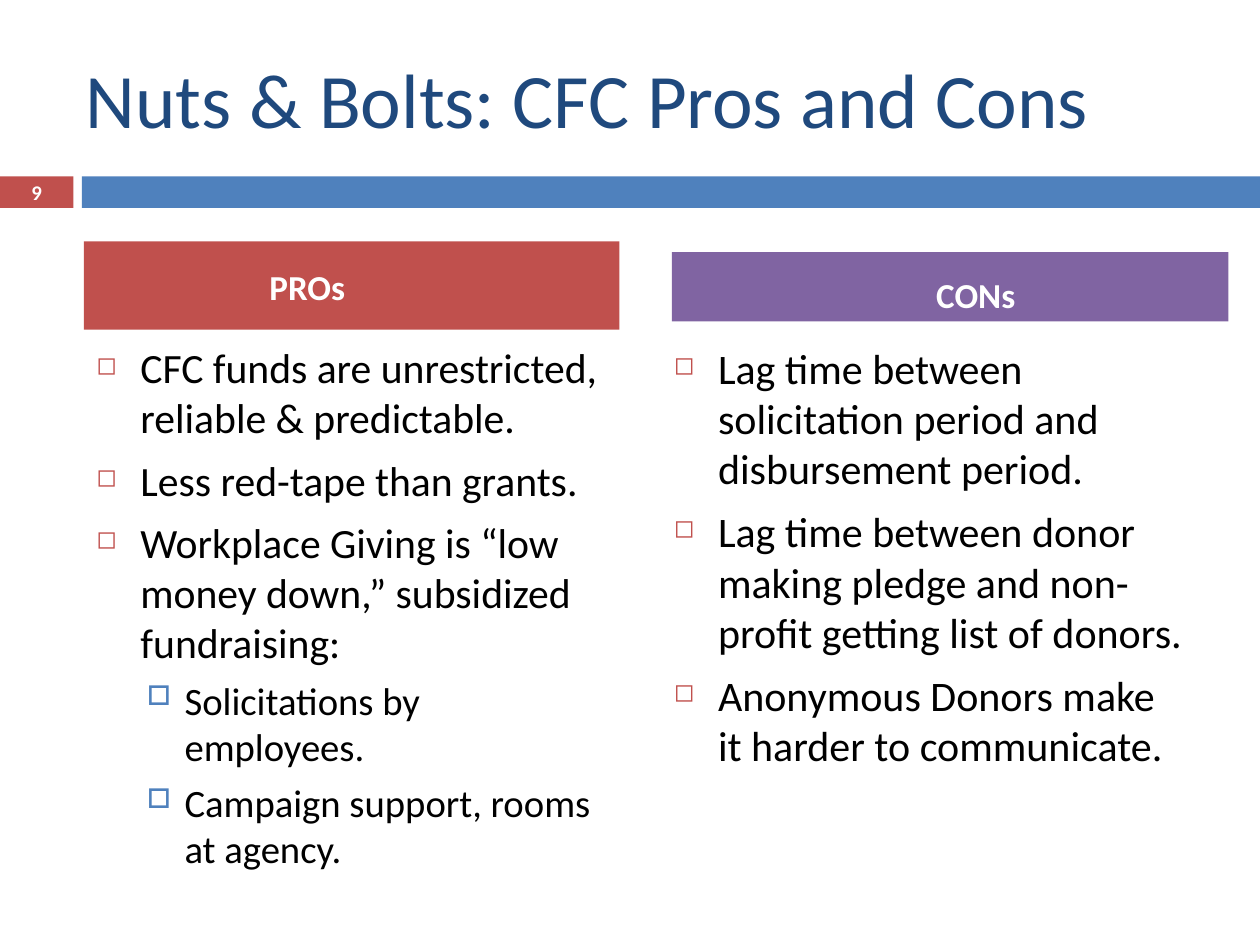
import pptx
import pptx.dml.color
import pptx.enum.shapes
import pptx.enum.text
import pptx.oxml.ns
import pptx.util
from lxml import etree

Pt = pptx.util.Pt
ANCHOR = pptx.enum.text.MSO_ANCHOR
ALIGN = pptx.enum.text.PP_ALIGN
FONT = "Calibri"
COLORS = {
    "title": "1F497D",
    "red": "C0504D",
    "blue": "4F81BD",
    "purple": "8064A2",
    "text": "000000",
    "white": "FFFFFF",
}
# Bullet levels: left indent, hanging indent, space before, character, color, size %
LEVELS = [
    (25.2, 25.2, 7, "◻", "red", 60),
    (50.4, 21.6, 5.5, "□", "blue", 70),
]
PROS = [
    (0, "CFC funds are unrestricted, reliable & predictable."),
    (0, "Less red-tape than grants."),
    (0, "Workplace Giving is “low money down,” subsidized fundraising:"),
    (1, "Solicitations by employees."),
    (1, "Campaign support, rooms at agency."),
]
CONS = [
    (0, "Lag time between solicitation period and disbursement period."),
    (0, "Lag time between donor making pledge and non-profit getting list of donors."),
    (0, "Anonymous Donors make it harder to communicate."),
]


def rgb(name):
    return pptx.dml.color.RGBColor.from_string(COLORS[name])


def format_runs(paragraph, size, color, bold=False):
    for run in paragraph.runs:
        run.font.name = FONT
        run.font.size = Pt(size)
        run.font.bold = bold
        run.font.color.rgb = rgb(color)


def add_bar(slide, left, top, width, height, color):
    shape = slide.shapes.add_shape(
        pptx.enum.shapes.MSO_SHAPE.RECTANGLE,
        Pt(left), Pt(top), Pt(width), Pt(height))
    shape.shadow.inherit = False
    shape.fill.solid()
    shape.fill.fore_color.rgb = rgb(color)
    shape.line.fill.background()
    return shape


def set_label(shape, text, size, color, bold=False, align=ALIGN.LEFT):
    frame = shape.text_frame
    frame.word_wrap = True
    frame.vertical_anchor = ANCHOR.MIDDLE
    frame.text = text
    frame.paragraphs[0].alignment = align
    format_runs(frame.paragraphs[0], size, color, bold)


def add_text_box(slide, left, top, width, height):
    box = slide.shapes.add_textbox(Pt(left), Pt(top), Pt(width), Pt(height))
    box.text_frame.word_wrap = True
    return box


def add_header(slide, left, top, width, height, color, text, inset, drop):
    header = add_bar(slide, left, top, width, height, color)
    set_label(header, text, 20, "white", bold=True)
    header.text_frame.margin_left = Pt(inset)
    header.text_frame.margin_top = Pt(drop)


def set_bullet(paragraph, level):
    indent, hanging, space, character, color, percent = LEVELS[level]
    paragraph.level = level
    paragraph.space_before = Pt(space)
    properties = paragraph._p.get_or_add_pPr()
    properties.set("marL", str(Pt(indent)))
    properties.set("indent", str(-Pt(hanging)))
    qn = pptx.oxml.ns.qn
    bullet_color = etree.SubElement(properties, qn("a:buClr"))
    etree.SubElement(bullet_color, qn("a:srgbClr"), val=COLORS[color])
    etree.SubElement(properties, qn("a:buSzPct"), val=str(percent * 1000))
    etree.SubElement(properties, qn("a:buChar"), char=character)


def add_bullets(slide, left, top, width, height, items, sizes):
    frame = add_text_box(slide, left, top, width, height).text_frame
    frame.text = "\n".join(text for level, text in items)
    for paragraph, (level, text) in zip(frame.paragraphs, items):
        set_bullet(paragraph, level)
        format_runs(paragraph, sizes[level], "text")


def main():
    presentation = pptx.Presentation()
    presentation.slide_width = Pt(720)
    presentation.slide_height = Pt(540)
    slide = presentation.slides.add_slide(presentation.slide_layouts[6])

    # Title
    title = add_text_box(slide, 42, 21.6, 642, 68.4)
    set_label(title, "Nuts & Bolts: CFC Pros and Cons", 44, "title")

    # Divider with the slide number
    number = add_bar(slide, 0, 100.8, 42, 18, "red")
    set_label(number, "9", 11.9, "white", bold=True, align=ALIGN.CENTER)
    add_bar(slide, 46.8, 100.8, 673.2, 18, "blue")

    # Column headers
    add_header(slide, 48, 138, 306, 50.4, "red", "PROs", 106, 5)
    add_header(slide, 384, 144, 318, 39.6, "purple", "CONs", 151, 12)

    # Column lists
    add_bullets(slide, 48, 192, 306, 312, PROS, (23.8, 22.1))
    add_bullets(slide, 378, 192, 306, 282, CONS, (24, 22))

    presentation.save("out.pptx")


if __name__ == "__main__":
    main()
